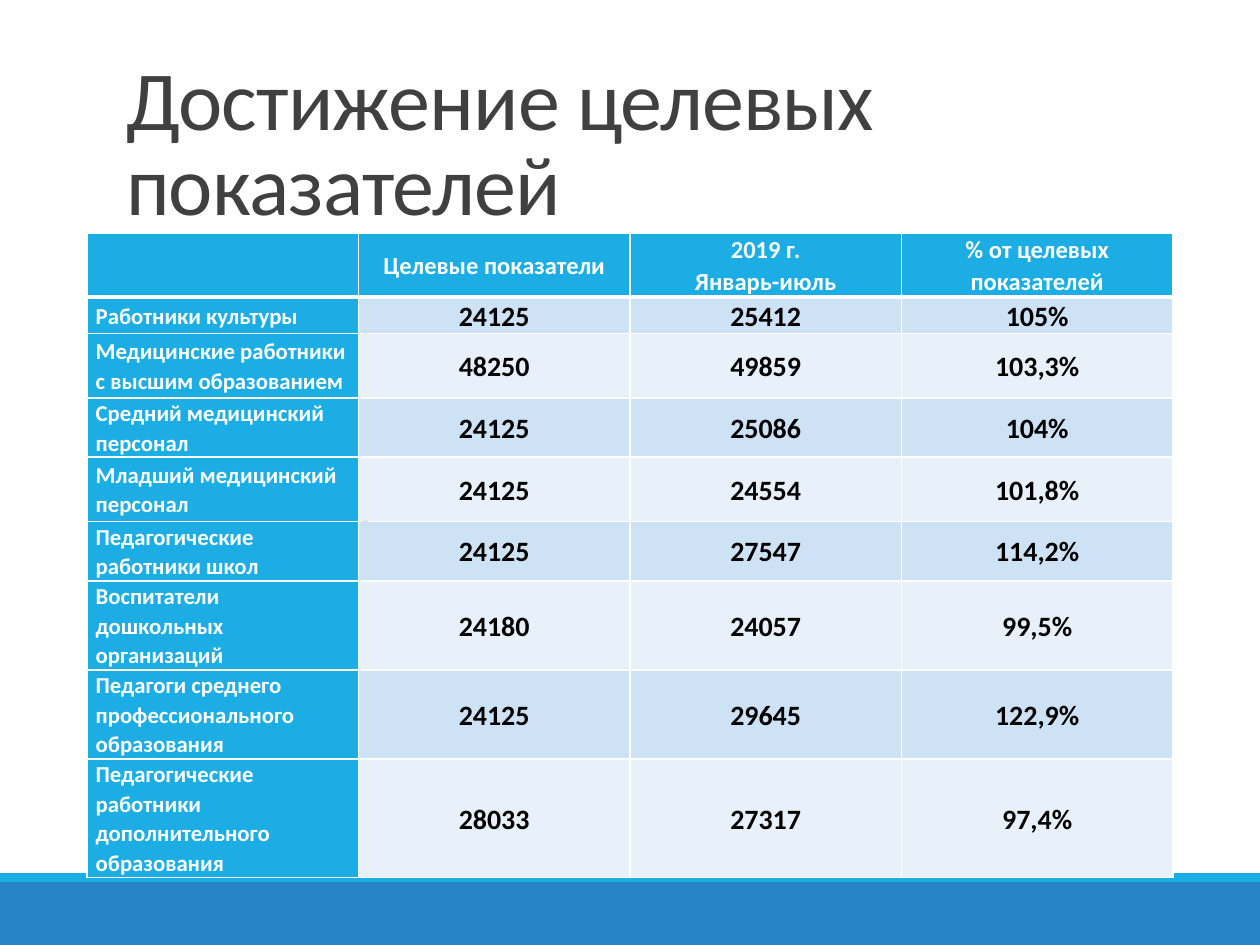
import pptx
import pptx.dml.color
import pptx.enum.shapes
import pptx.enum.text
import pptx.oxml
import pptx.oxml.ns
import pptx.util
from pptx.util import Inches

COLORS = {
    "accent": "1CADE4",
    "footer": "2683C6",
    "title": "404040",
    "white": "FFFFFF",
    "black": "000000",
    "band_dark": "CDE3F5",
    "band_light": "E8F1FA",
}
FONT = "Calibri"
HEADER = ["", "Целевые показатели", "2019 г.\nЯнварь-июль", "% от целевых показателей"]
# row height in inches, then the cells
ROWS = [
    (0.25, "Работники культуры", "24125", "25412", "105%"),
    (0.51, "Медицинские работники с высшим образованием", "48250", "49859", "103,3%"),
    (0.42, "Средний медицинский персонал", "24125", "25086", "104%"),
    (0.51, "Младший медицинский персонал", "24125", "24554", "101,8%"),
    (0.42, "Педагогические работники школ", "24125", "27547", "114,2%"),
    (0.64, "Воспитатели дошкольных организаций", "24180", "24057", "99,5%"),
    (0.64, "Педагоги среднего профессионального образования", "24125", "29645", "122,9%"),
    (0.85, "Педагогические работники дополнительного образования", "28033", "27317", "97,4%"),
]


def format_text(text_frame, size, color, bold, alignment, line_spacing):
    for paragraph in text_frame.paragraphs:
        paragraph.alignment = alignment
        paragraph.line_spacing = line_spacing
        for run in paragraph.runs:
            run.font.name = FONT
            run.font.size = pptx.util.Pt(size)
            run.font.bold = bold
            run.font.color.rgb = pptx.dml.color.RGBColor.from_string(COLORS[color])


def set_borders(cell, widths):
    properties = cell._tc.get_or_add_tcPr()
    for index, (side, width) in enumerate(widths.items()):
        border = pptx.oxml.parse_xml(
            f'<a:{side} {pptx.oxml.ns.nsdecls("a")} w="{pptx.util.Pt(width)}">'
            f'<a:solidFill><a:srgbClr val="{COLORS["white"]}"/></a:solidFill></a:{side}>'
        )
        properties.insert(index, border)


presentation = pptx.Presentation()
presentation.slide_width = Inches(10)
presentation.slide_height = Inches(7.5)
slide = presentation.slides.add_slide(presentation.slide_layouts[5])
left = pptx.enum.text.PP_ALIGN.LEFT
center = pptx.enum.text.PP_ALIGN.CENTER

# Footer bars
for top, height, color in [(7, 0.5, "footer"), (6.93, 0.07, "accent")]:
    bar = slide.shapes.add_shape(
        pptx.enum.shapes.MSO_SHAPE.RECTANGLE, 0, Inches(top), Inches(10), Inches(height)
    )
    bar.shadow.inherit = False
    bar.fill.solid()
    bar.fill.fore_color.rgb = pptx.dml.color.RGBColor.from_string(COLORS[color])
    bar.line.fill.background()

# Title
title = slide.shapes.title
title.left, title.top = Inches(0.9), Inches(0.31)
title.width, title.height = Inches(8.25), Inches(1.59)
title.text_frame.text = "Достижение целевых показателей"
title.text_frame.word_wrap = True
title.text_frame.auto_size = pptx.enum.text.MSO_AUTO_SIZE.NONE
title.text_frame.vertical_anchor = pptx.enum.text.MSO_ANCHOR.BOTTOM
format_text(title.text_frame, 48, "title", False, left, 0.85)
title.text_frame.paragraphs[0].runs[0].font._element.set("spc", "-50")

# Table
table_rows = [(0.45, *HEADER)] + ROWS
table = slide.shapes.add_table(
    len(table_rows), len(HEADER), Inches(0.69), Inches(1.85), Inches(8.62), Inches(4.69)
).table
for column in table.columns:
    column.width = Inches(2.155)

for row_index, (height, *texts) in enumerate(table_rows):
    table.rows[row_index].height = Inches(height)
    for column_index, text in enumerate(texts):
        cell = table.cell(row_index, column_index)
        cell.text_frame.text = text
        cell.vertical_anchor = pptx.enum.text.MSO_ANCHOR.MIDDLE
        cell.margin_left = cell.margin_right = Inches(0.07)
        cell.margin_top = cell.margin_bottom = 0

        if row_index == 0:
            fill, size, color, alignment = "accent", 14, "white", center
        elif column_index == 0:
            fill, size, color, alignment = "accent", 13, "white", left
        else:
            fill = "band_dark" if row_index % 2 else "band_light"
            size, color, alignment = 16, "black", center
        cell.fill.solid()
        cell.fill.fore_color.rgb = pptx.dml.color.RGBColor.from_string(COLORS[fill])
        format_text(cell.text_frame, size, color, True, alignment, 1.07)

        # A thick rule separates the header from the body
        top_width = 3 if row_index == 1 else 1
        bottom_width = 3 if row_index == 0 else 1
        set_borders(cell, {"lnL": 1, "lnR": 1, "lnT": top_width, "lnB": bottom_width})

presentation.save("out.pptx")
